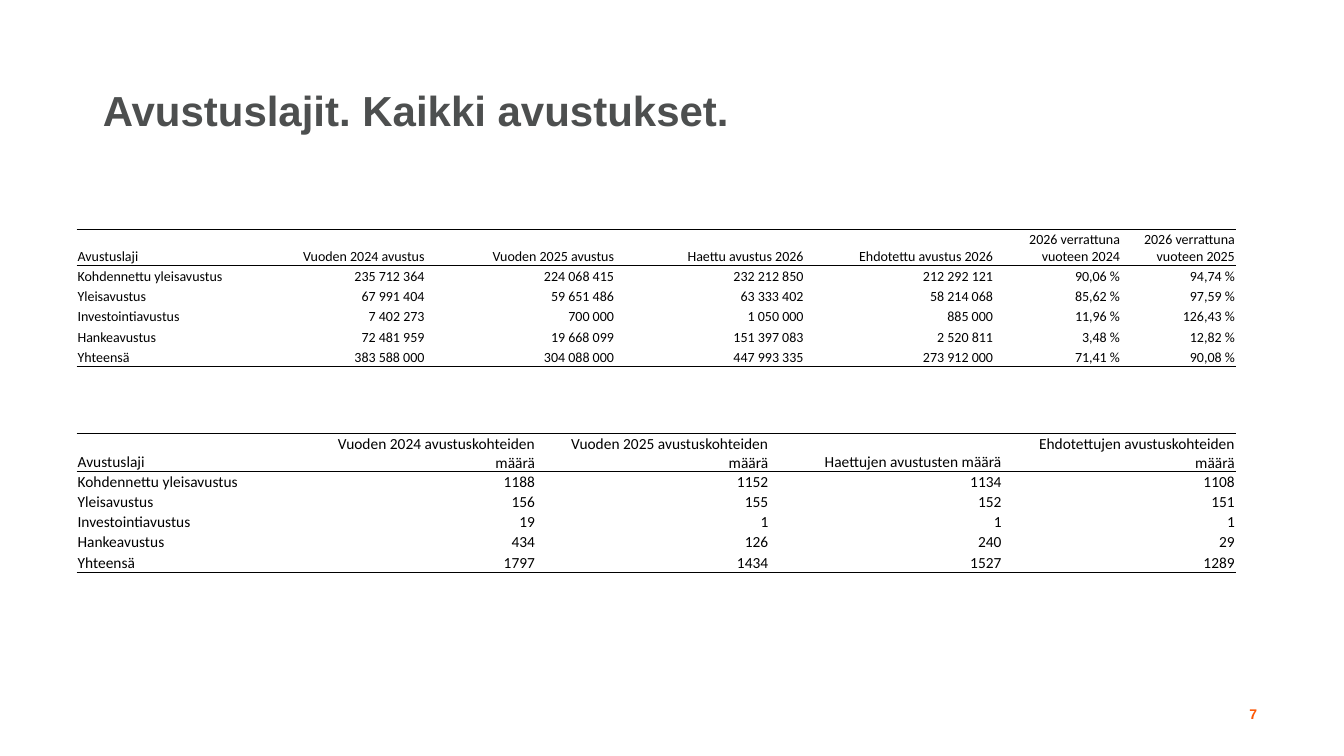
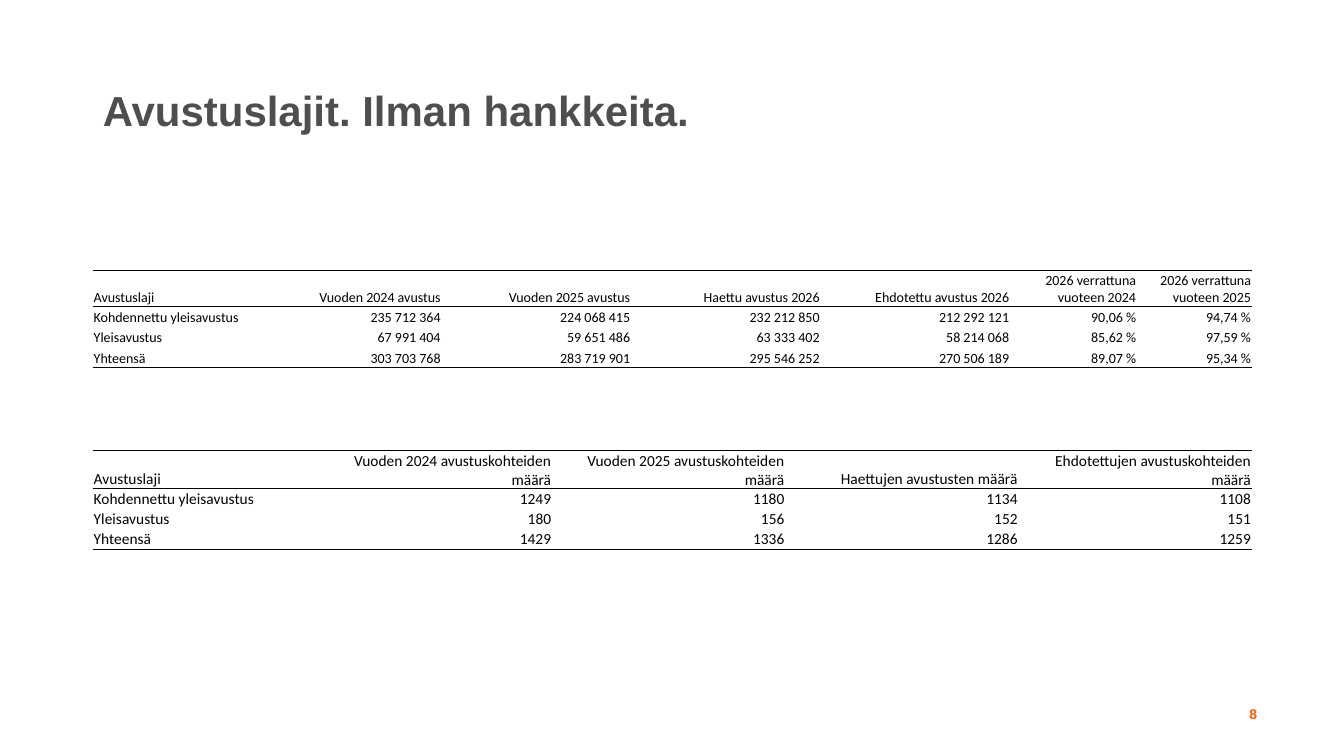
import pptx
import pptx.util
import pptx.dml.color
import pptx.enum.text
import pptx.oxml.ns
from lxml import etree

HUES = {"title": "4D4F4F", "page": "FD5705", "ink": "000000"}
WIDE, HIGH = pptx.util.Inches(13.33), pptx.util.Inches(7.5)
COL, ROW = WIDE / 40, HIGH / 30  # grid of 40 columns by 30 rows
HEAD, BODY = 1.44, 0.8  # table row heights in grid rows
ALIGN = pptx.enum.text.PP_ALIGN
ANCHOR = pptx.enum.text.MSO_ANCHOR

# Column heads and their relative widths
SUMS = {
    "size": 10,
    "cols": [1.73, 1.73, 1.88, 1.88, 1.88, 1.26, 1.14],
    "head": ["Avustuslaji", "Vuoden 2024 avustus", "Vuoden 2025 avustus",
             "Haettu avustus 2026", "Ehdotettu avustus 2026",
             "2026 verrattuna vuoteen 2024", "2026 verrattuna vuoteen 2025"],
}
COUNTS = {
    "size": 11,
    "cols": [2.24, 2.31, 2.31, 2.31, 2.31],
    "head": ["Avustuslaji", "Vuoden 2024 avustuskohteiden määrä",
             "Vuoden 2025 avustuskohteiden määrä",
             "Haettujen avustusten määrä",
             "Ehdotettujen avustuskohteiden määrä"],
}

# Rows that both slides show
GENERAL = [
    ["Kohdennettu yleisavustus", "235 712 364", "224 068 415", "232 212 850",
     "212 292 121", "90,06 %", "94,74 %"],
    ["Yleisavustus", "67 991 404", "59 651 486", "63 333 402", "58 214 068",
     "85,62 %", "97,59 %"],
]

PAGES = [
    {
        "title": "Avustuslajit. Kaikki avustukset.", "page": 7, "left": 2.28,
        "tables": [
            (SUMS, 9.08, GENERAL + [
                ["Investointiavustus", "7 402 273", "700 000", "1 050 000",
                 "885 000", "11,96 %", "126,43 %"],
                ["Hankeavustus", "72 481 959", "19 668 099", "151 397 083",
                 "2 520 811", "3,48 %", "12,82 %"],
                ["Yhteensä", "383 588 000", "304 088 000", "447 993 335",
                 "273 912 000", "71,41 %", "90,08 %"],
            ]),
            (COUNTS, 17.2, [
                ["Kohdennettu yleisavustus", "1188", "1152", "1134", "1108"],
                ["Yleisavustus", "156", "155", "152", "151"],
                ["Investointiavustus", "19", "1", "1", "1"],
                ["Hankeavustus", "434", "126", "240", "29"],
                ["Yhteensä", "1797", "1434", "1527", "1289"],
            ]),
        ],
    },
    {
        "title": "Avustuslajit. Ilman hankkeita.", "page": 8, "left": 2.76,
        "tables": [
            (SUMS, 10.72, GENERAL + [
                ["Yhteensä", "303 703 768", "283 719 901", "295 546 252",
                 "270 506 189", "89,07 %", "95,34 %"],
            ]),
            (COUNTS, 17.88, [
                ["Kohdennettu yleisavustus", "1249", "1180", "1134", "1108"],
                ["Yleisavustus", "180", "156", "152", "151"],
                ["Yhteensä", "1429", "1336", "1286", "1259"],
            ]),
        ],
    },
]


def place(x, y, w, h):
    """Turn grid units into slide lengths."""
    return round(x * COL), round(y * ROW), round(w * COL), round(h * ROW)


def style(para, face, size, hue, bold=False, align=ALIGN.LEFT):
    para.alignment = align
    for run in para.runs:
        run.font.name = face
        run.font.size = pptx.util.Pt(size)
        run.font.bold = bold
        run.font.color.rgb = pptx.dml.color.RGBColor.from_string(HUES[hue])


def rule(cell, sides):
    """Draw thin lines on the given sides and clear the others."""
    props = cell._tc.get_or_add_tcPr()
    for side in "LRTB":
        line = etree.SubElement(props, pptx.oxml.ns.qn("a:ln" + side))
        if side in sides:
            line.set("w", str(pptx.util.Pt(0.5)))
            fill = etree.SubElement(line, pptx.oxml.ns.qn("a:solidFill"))
            tint = etree.SubElement(fill, pptx.oxml.ns.qn("a:srgbClr"))
            tint.set("val", HUES["ink"])
        else:
            etree.SubElement(line, pptx.oxml.ns.qn("a:noFill"))


def add_title(slide, text, box):
    title = slide.shapes.title
    title.left, title.top, title.width, title.height = box
    frame = title.text_frame
    frame.text = text
    frame.word_wrap = True
    frame.auto_size = pptx.enum.text.MSO_AUTO_SIZE.NONE
    frame.vertical_anchor = ANCHOR.MIDDLE
    frame.paragraphs[0].line_spacing = 0.9
    style(frame.paragraphs[0], "Arial", 30, "title", True)


def add_page(slide, page, box):
    frame = slide.shapes.add_textbox(*box).text_frame
    frame.word_wrap = True
    frame.text = str(page)
    style(frame.paragraphs[0], "Arial", 10, "page", True, ALIGN.RIGHT)


def add_grid(slide, kind, rows, box):
    lines = [kind["head"]] + rows
    last = len(lines) - 1
    grid = slide.shapes.add_table(len(lines), len(kind["cols"]), *box).table
    grid.first_row = grid.horz_banding = False
    for col, share in zip(grid.columns, kind["cols"]):
        col.width = round(box[2] * share / sum(kind["cols"]))
    for r, line in enumerate(lines):
        grid.rows[r].height = round((BODY if r else HEAD) * ROW)
        sides = {0: "TB", 1: "T", last: "B"}.get(r, "")
        for c, text in enumerate(line):
            cell = grid.cell(r, c)
            rule(cell, sides)
            cell.fill.background()
            cell.margin_left = cell.margin_right = pptx.util.Inches(0.01)
            cell.margin_top, cell.margin_bottom = pptx.util.Inches(0.01), 0
            cell.vertical_anchor = ANCHOR.BOTTOM
            cell.text_frame.text = text
            style(cell.text_frame.paragraphs[0], "Calibri", kind["size"],
                  "ink", align=ALIGN.RIGHT if c else ALIGN.LEFT)


def add_slide(deck, data):
    slide = deck.slides.add_slide(deck.slide_layouts[5])
    add_title(slide, data["title"], place(2.76, 1.6, 26.97, 5.8))
    add_page(slide, data["page"], place(35.07, 27.8, 2.64, 1.6))
    for kind, top, rows in data["tables"]:
        high = HEAD + BODY * len(rows)
        add_grid(slide, kind, rows, place(data["left"], top, 34.5, high))


def main():
    deck = pptx.Presentation()
    deck.slide_width, deck.slide_height = WIDE, HIGH
    for data in PAGES:
        add_slide(deck, data)
    deck.save("out.pptx")


if __name__ == "__main__":
    main()
